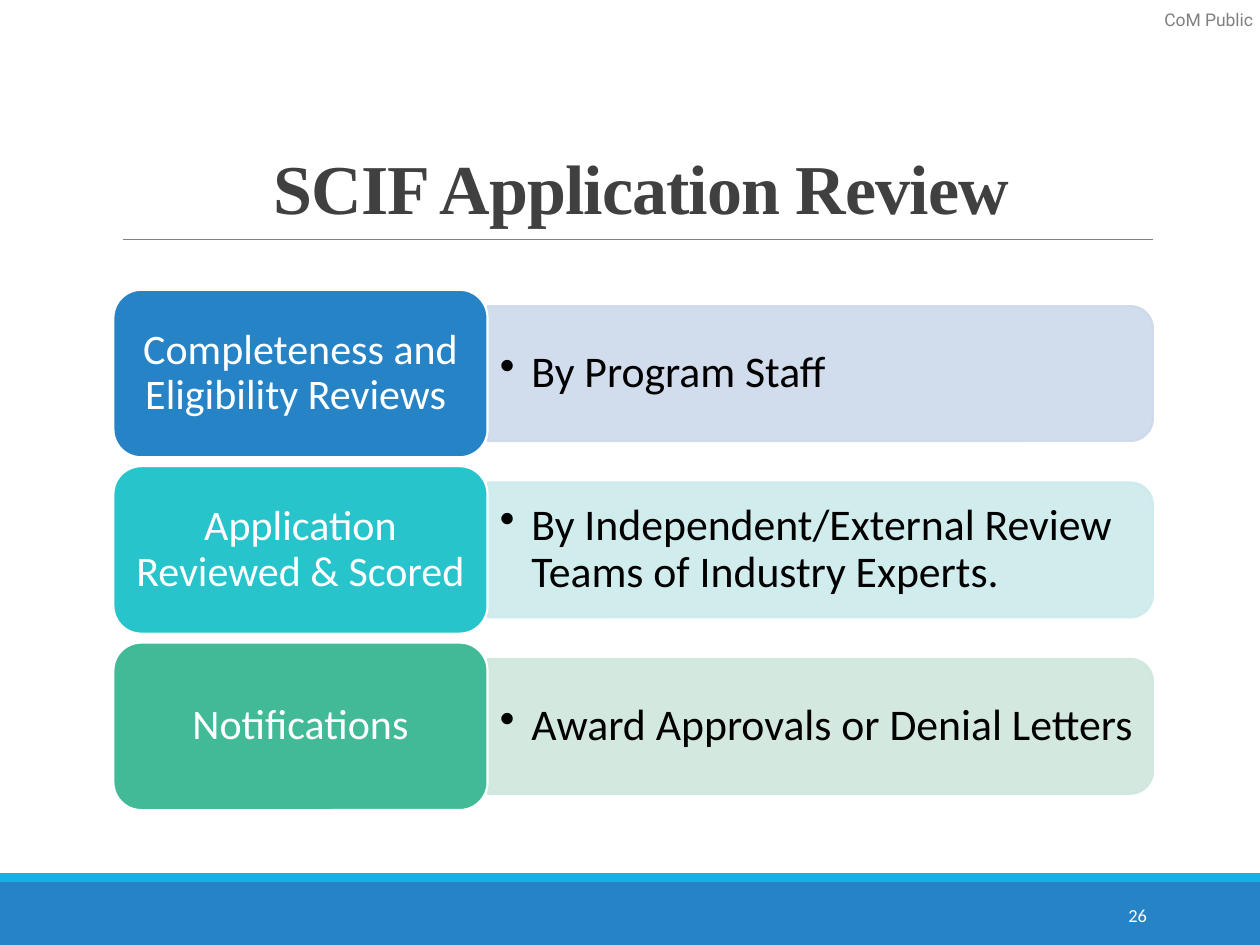
from lxml import etree
from pptx import Presentation
from pptx.dml.color import RGBColor
from pptx.enum.shapes import MSO_CONNECTOR, MSO_SHAPE
from pptx.enum.text import MSO_ANCHOR, PP_ALIGN
from pptx.oxml.ns import qn
from pptx.util import Inches, Pt

WHITE = RGBColor(0xFF, 0xFF, 0xFF)
BLACK = RGBColor(0x00, 0x00, 0x00)
GRAY = RGBColor(0x80, 0x80, 0x80)
DARK = RGBColor(0x40, 0x40, 0x40)
BLUE = RGBColor(0x26, 0x83, 0xC6)
SKY = RGBColor(0x1C, 0xAD, 0xE4)
TEAL = RGBColor(0x28, 0xC4, 0xCC)
GREEN = RGBColor(0x42, 0xBA, 0x97)
PALE_BLUE = RGBColor(0xCD, 0xD9, 0xEA)
PALE_TEAL = RGBColor(0xCD, 0xEA, 0xEC)
PALE_GREEN = RGBColor(0xCF, 0xE7, 0xDD)

STEPS = [
    ("Completeness and Eligibility Reviews ", "By Program Staff", BLUE, PALE_BLUE),
    ("Application Reviewed & Scored",
     "By Independent/External Review Teams of Industry Experts.", TEAL, PALE_TEAL),
    ("Notifications", "Award Approvals or Denial Letters", GREEN, PALE_GREEN),
]


def add_box(s, kind, x, y, w, h, fill, line=None):
    sp = s.shapes.add_shape(kind, Inches(x), Inches(y), Inches(w), Inches(h))
    sp.shadow.inherit = False
    sp.fill.solid()
    sp.fill.fore_color.rgb = fill
    if line is None:
        sp.line.fill.background()
    else:
        sp.line.color.rgb = line
        sp.line.width = Pt(1.25)
    return sp


def set_text(sp, text, font, size, color, align, anchor=MSO_ANCHOR.MIDDLE,
             spacing=None, wrap=True):
    tf = sp.text_frame
    tf.word_wrap = wrap
    tf.vertical_anchor = anchor
    p = tf.paragraphs[0]
    p.text = text
    p.alignment = align
    p.line_spacing = spacing
    r = p.runs[0]
    r.font.name = font
    r.font.size = Pt(size)
    r.font.color.rgb = color
    return p


def add_text(s, x, y, w, h, *style, **options):
    sp = s.shapes.add_textbox(Inches(x), Inches(y), Inches(w), Inches(h))
    return sp, set_text(sp, *style, **options)


def make_translucent(sp, percent):
    """Give the fill and the line of the shape the same opacity."""
    for clr in sp._element.spPr.iter(qn("a:srgbClr")):
        etree.SubElement(clr, qn("a:alpha")).set("val", str(percent * 1000))


def add_bullet(p):
    pPr = p._p.get_or_add_pPr()
    pPr.set("marL", str(Inches(0.25)))
    pPr.set("indent", str(Inches(-0.25)))
    etree.SubElement(pPr, qn("a:buChar")).set("char", "•")


def add_heading(s, x, y, w, h):
    title = s.shapes.title
    title.left, title.top, title.width, title.height = map(Inches, (x, y, w, h))
    p = set_text(title, "SCIF Application Review", "Times New Roman", 40, DARK,
                 PP_ALIGN.CENTER, MSO_ANCHOR.BOTTOM, 0.85)
    r = p.runs[0]
    r.font.bold = True
    r._r.get_or_add_rPr().set("spc", "-50")


def add_rule(s, x, y, w):
    line = s.shapes.add_connector(MSO_CONNECTOR.STRAIGHT, Inches(x), Inches(y),
                                  Inches(x + w), Inches(y))
    line.line.color.rgb = GRAY
    line.line.width = Pt(0.5)
    etree.SubElement(line._element.spPr, qn("a:effectLst"))


def add_step(s, x, y, w, h, label, detail, color, pale):
    """Place a label with a bar to its right, rounded on the outer side."""
    label_w, bar_h = 2.97, 1.07
    bar_x, bar_w = x + label_w, w - label_w
    mid = y + h / 2
    # The bar is drawn upright about its centre, then turned a quarter.
    bar = add_box(s, MSO_SHAPE.ROUND_2_SAME_RECTANGLE, bar_x + (bar_w - bar_h) / 2,
                  mid - bar_w / 2, bar_h, bar_w, pale, pale)
    bar.rotation = 90
    make_translucent(bar, 90)
    _, p = add_text(s, bar_x, mid - 0.48, bar_w - 0.05, 0.96, detail, "Calibri", 25,
                    BLACK, PP_ALIGN.LEFT, spacing=0.9)
    add_bullet(p)
    box = add_box(s, MSO_SHAPE.ROUNDED_RECTANGLE, x, y, label_w, h, color, WHITE)
    set_text(box, label, "Calibri", 24, WHITE, PP_ALIGN.CENTER, spacing=0.9)


def add_steps(s, x, y, w, h):
    step_h = 1.33
    pitch = (h - step_h) / (len(STEPS) - 1)
    for i, step in enumerate(STEPS):
        add_step(s, x, y + i * pitch, w, step_h, *step)


def add_footer(s, x, y, w, h):
    stripe_h = 0.07
    add_box(s, MSO_SHAPE.RECTANGLE, x, y + stripe_h, w, h - stripe_h, BLUE)
    add_box(s, MSO_SHAPE.RECTANGLE, x, y, w, stripe_h, SKY)
    add_text(s, x + w - 1.88, y + 0.13, 1.08, 0.4, "26", "Calibri", 10.5, WHITE,
             PP_ALIGN.RIGHT)


def add_marking(s, x, y, w, h):
    sp, _ = add_text(s, x, y, w, h, "CoM Public", "Roboto", 10, GRAY, PP_ALIGN.LEFT,
                     anchor=MSO_ANCHOR.TOP, wrap=False)
    tf = sp.text_frame
    tf.margin_left = tf.margin_right = tf.margin_top = tf.margin_bottom = 0


def main():
    prs = Presentation()
    prs.slide_width, prs.slide_height = Inches(10), Inches(7.5)
    s = prs.slides.add_slide(prs.slide_layouts[5])
    add_footer(s, 0, 6.93, 10, 0.57)
    add_rule(s, 0.98, 1.9, 8.17)
    add_marking(s, 9.24, 0.07, 0.72, 0.17)
    add_heading(s, 2.06, 0.31, 6.06, 1.56)
    add_steps(s, 0.9, 2.3, 8.25, 4.13)
    prs.save("out.pptx")


if __name__ == "__main__":
    main()
